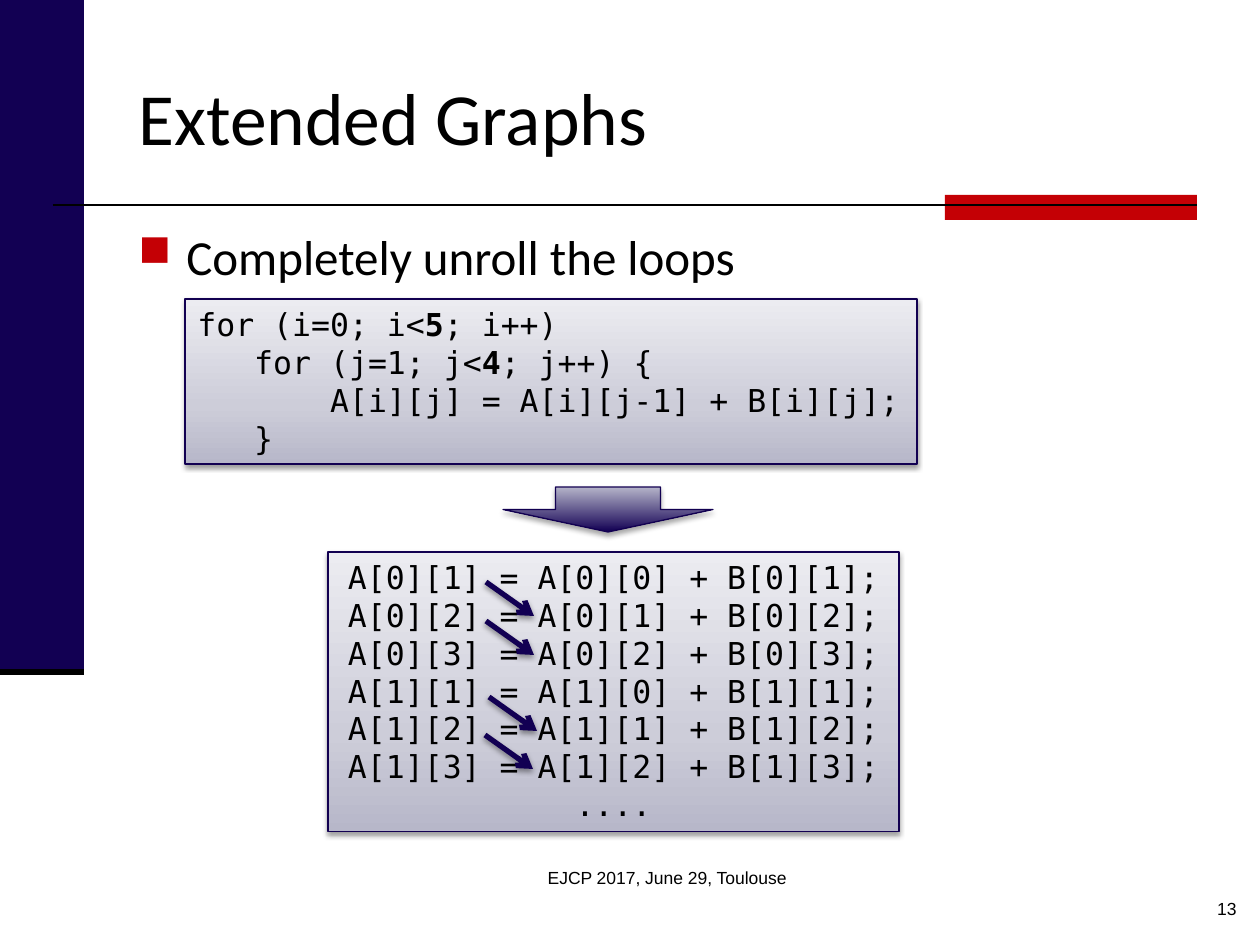
import pptx
import pptx.dml.color
import pptx.enum.shapes
import pptx.enum.text
import pptx.oxml
import pptx.oxml.ns
import pptx.util

PX = 7257  # EMU per pixel, 126 pixels to the inch
NAVY, EDGE, RED, BLACK = "120053", "120051", "C40005", "000000"
PANEL_STOPS = [(0, "B7B7C9"), (35, "CDCDD9"), (100, "ECECF1")]
ARROW_STOPS = [(0, NAVY), (100, "B6B5CA")]
NAMESPACE = pptx.oxml.ns.nsdecls("a")

rgb = pptx.dml.color.RGBColor.from_string
qn = pptx.oxml.ns.qn
parse_xml = pptx.oxml.parse_xml
Pt = pptx.util.Pt
SHAPE = pptx.enum.shapes.MSO_SHAPE
STRAIGHT = pptx.enum.shapes.MSO_CONNECTOR.STRAIGHT
ALIGN = pptx.enum.text.PP_ALIGN
ANCHOR = pptx.enum.text.MSO_ANCHOR
AUTO_SIZE = pptx.enum.text.MSO_AUTO_SIZE


def write_text(shape, text, font="Arial", size=10, color=BLACK, align=ALIGN.LEFT,
               anchor=ANCHOR.TOP, wrap=True, grow=False, bullet=None):
    """Each line becomes a paragraph; parts between asterisks are bold."""
    frame = shape.text_frame
    frame.word_wrap = wrap
    frame.vertical_anchor = anchor
    frame.auto_size = AUTO_SIZE.SHAPE_TO_FIT_TEXT if grow else AUTO_SIZE.NONE
    for number, line in enumerate(text.split("\n")):
        paragraph = frame.add_paragraph() if number else frame.paragraphs[0]
        paragraph.alignment = align
        if bullet:
            properties = paragraph._p.get_or_add_pPr()
            properties.set("marL", str(48 * PX))
            properties.set("indent", str(-48 * PX))
            for element in (f'<a:buClr {NAMESPACE}><a:srgbClr val="{RED}"/></a:buClr>',
                            f'<a:buSzPct {NAMESPACE} val="90000"/>',
                            f'<a:buChar {NAMESPACE} char="{bullet}"/>'):
                properties.append(parse_xml(element))
        for part, words in enumerate(line.split("*")):
            run = paragraph.add_run()
            run.text = words
            run.font.name = font
            run.font.size = Pt(size)
            run.font.bold = part % 2 == 1
            run.font.color.rgb = rgb(color)


def add_effects(shape, stops=None, opacity=38, distance=20000):
    """Upward gradient with a thin edge if stops are given, then a soft shadow."""
    if stops:
        shape.fill.gradient()
        shape.fill.gradient_angle = 90
        stop_list = shape._element.spPr.find(qn("a:gradFill")).find(qn("a:gsLst"))
        stop_list.clear()
        for position, color in stops:
            stop_list.append(parse_xml(
                f'<a:gs {NAMESPACE} pos="{position * 1000}"><a:srgbClr val="{color}"/></a:gs>'))
        shape.line.color.rgb = rgb(EDGE)
        shape.line.width = Pt(0.75)
    shape._element.spPr.append(parse_xml(
        f'<a:effectLst {NAMESPACE}><a:outerShdw blurRad="39000" dist="{distance}" '
        f'dir="5400000" rotWithShape="0"><a:srgbClr val="{BLACK}">'
        f'<a:alpha val="{opacity * 1000}"/></a:srgbClr></a:outerShdw></a:effectLst>'))


presentation = pptx.Presentation()
presentation.slide_width = pptx.util.Inches(10)
presentation.slide_height = pptx.util.Inches(7.5)
slide = presentation.slides.add_slide(presentation.slide_layouts[6])
shapes = slide.shapes

# Side band and red bar
for color, box in [(NAVY, (0, 0, 84, 672)), (RED, (945, 195, 252, 25))]:
    block = shapes.add_shape(SHAPE.RECTANGLE, *[value * PX for value in box])
    block.shadow.inherit = False
    block.fill.solid()
    block.fill.fore_color.rgb = rgb(color)
    block.line.fill.background()

# Rules under the title and the band
for width, ends in [(1.5, (53, 205, 1197, 205)), (3.5, (0, 672, 84, 672))]:
    rule = shapes.add_connector(STRAIGHT, *[value * PX for value in ends])
    rule.line.color.rgb = rgb(BLACK)
    rule.line.width = Pt(width)
    rule._element.spPr.append(parse_xml(f"<a:effectLst {NAMESPACE}/>"))

# Title, bullet, footer and slide number
for text, box, style in [
    ("Extended Graphs", (126, 38, 1071, 157),
     dict(font="Calibri", size=42, anchor=ANCHOR.MIDDLE)),
    ("Completely unroll the loops", (126, 220, 1071, 624),
     dict(font="Calibri", size=28, bullet="■")),
    ("EJCP 2017, June 29, Toulouse", (462, 861, 410, 63), dict(align=ALIGN.CENTER)),
    ("13", (987, 892, 262, 32), dict(align=ALIGN.RIGHT)),
]:
    text_box = shapes.add_textbox(*[value * PX for value in box])
    write_text(text_box, text, **style)

# Code panels: the loop nest and its unrolled statements
loop_code = """for (i=0; i<*5*; i++)
   for (j=1; j<*4*; j++) {
       A[i][j] = A[i][j-1] + B[i][j];
   }"""
statements = [f"A[{i}][{j}] = A[{i}][{j - 1}] + B[{i}][{j}];"
              for i in range(2) for j in range(1, 4)]
unrolled_code = "\n".join(statements + ["...."])
for code, box, style in [
    (loop_code, (185, 299, 732, 165), dict(wrap=False)),
    (unrolled_code, (328, 552, 571, 280), dict(align=ALIGN.CENTER)),
]:
    panel = shapes.add_shape(SHAPE.RECTANGLE, *[value * PX for value in box])
    add_effects(panel, PANEL_STOPS)
    write_text(panel, code, font="DejaVu Sans Mono", size=18, grow=True, **style)

# Dependence arrows between statements
for x, y in [(486, 582), (486, 621), (489, 697), (485, 735)]:
    dependence = shapes.add_connector(STRAIGHT, x * PX, y * PX, (x + 48) * PX, (y + 34) * PX)
    dependence.line.color.rgb = rgb(NAVY)
    dependence.line.width = Pt(3)
    dependence.line._get_or_add_ln().append(
        parse_xml(f'<a:tailEnd {NAMESPACE} type="arrow"/>'))
    add_effects(dependence)

# Block arrow from loop to unrolled code
block_arrow = shapes.add_shape(SHAPE.DOWN_ARROW, 503 * PX, 487 * PX, 210 * PX, 45 * PX)
add_effects(block_arrow, ARROW_STOPS, opacity=35, distance=23000)

presentation.save("out.pptx")
